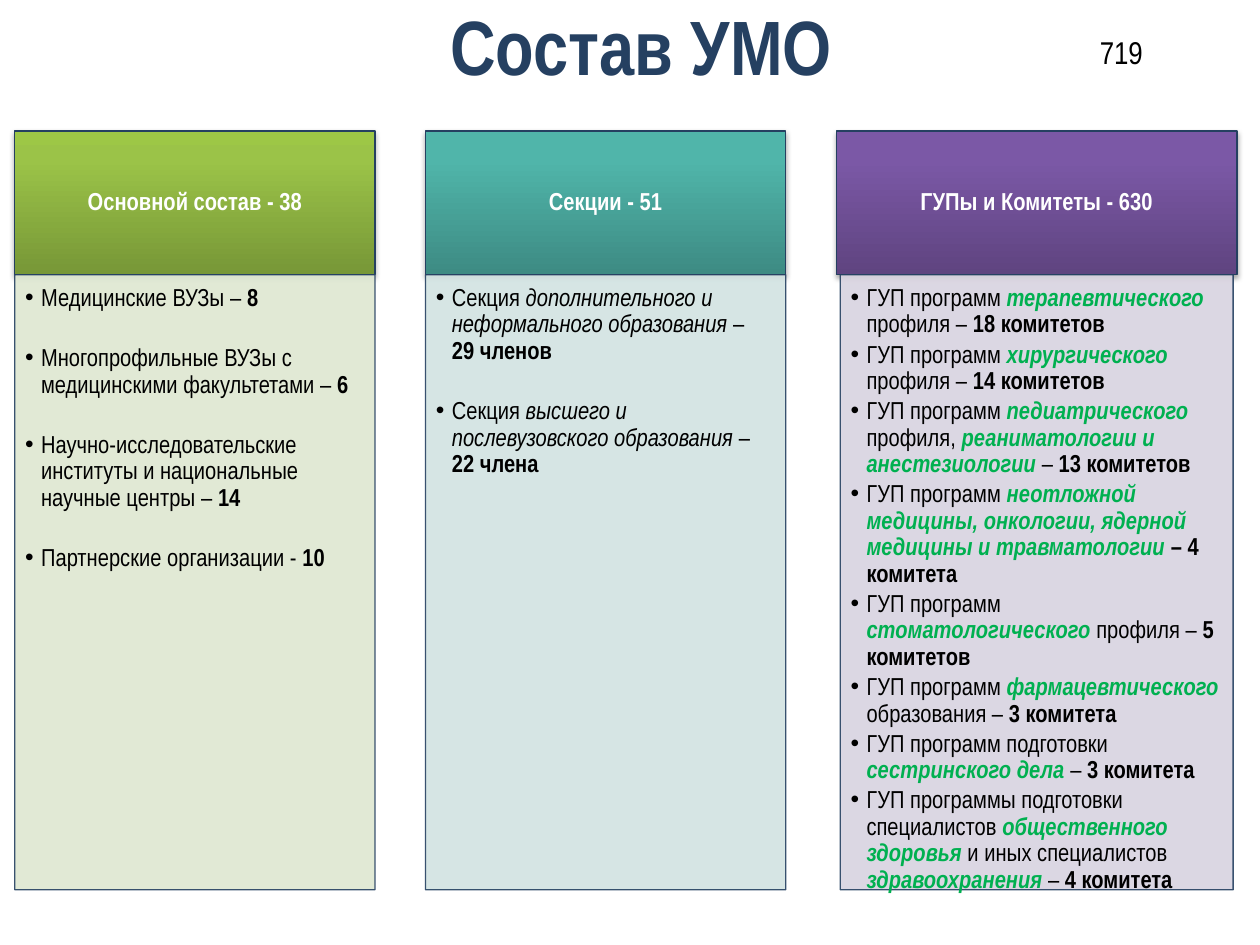
import copy
from dataclasses import dataclass

import lxml.etree
import pptx
import pptx.dml.color
import pptx.enum.shapes
import pptx.enum.text
import pptx.oxml
import pptx.oxml.ns
import pptx.util

Cm = pptx.util.Cm
Pt = pptx.util.Pt
qn = pptx.oxml.ns.qn
ANCHOR = pptx.enum.text.MSO_ANCHOR
CENTER = pptx.enum.text.PP_ALIGN.CENTER


@dataclass(frozen=True)
class Theme:
    font: str = "Arial Narrow"
    navy: str = "254061"
    black: str = "000000"
    white: str = "FFFFFF"
    green: str = "00B050"
    title: int = 44
    number: int = 18
    body: int = 14
    tight: float = 2.1
    loose: float = 19.3


THEME = Theme()
STYLES = {
    "plain": {},
    "bold": {"bold": True},
    "italic": {"italic": True},
    "green": {"bold": True, "italic": True, "color": THEME.green},
}
GUP = ("ГУП программ ", "plain")
DASH = ("– ", "plain")
PROFILE = ("профиля – ", "plain")

COLUMNS = [
    {
        "title": "Основной состав - 38", "width": 7.26, "inset": 0,
        "gradient": ("779737", "9BC348", "9DC746"), "tint": "DEE7D1", "gap": THEME.loose,
        "items": [
            [("Медицинские ВУЗы – ", "plain"), ("8", "bold")],
            [("Многопрофильные ВУЗы с медицинскими факультетами – ", "plain"), ("6", "bold")],
            [("Научно-исследовательские институты и национальные научные центры – ", "plain"),
             ("14", "bold")],
            [("Партнерские организации - ", "plain"), ("10", "bold")],
        ],
    },
    {
        "title": "Секции - 51", "width": 7.26, "inset": 0,
        "gradient": ("3D8B83", "50B5AA", "4EB8AC"), "tint": "D2E3E2", "gap": THEME.loose,
        "items": [
            [("Секция ", "plain"), ("дополнительного и неформального образования ", "italic"),
             DASH, ("29 членов", "bold")],
            [("Секция ", "plain"), ("высшего и послевузовского образования ", "italic"),
             DASH, ("22 члена", "bold")],
        ],
    },
    {
        "title": "ГУПы и Комитеты - 630", "width": 8.08, "inset": 0.08,
        "gradient": ("5F4480", "7B58A6", "7C57A8"), "tint": "D8D3E0", "gap": THEME.tight,
        "items": [
            [GUP, ("терапевтического ", "green"), PROFILE, ("18 комитетов", "bold")],
            [GUP, ("хирургического ", "green"), PROFILE, ("14 комитетов", "bold")],
            [GUP, ("педиатрического ", "green"), ("профиля, ", "plain"),
             ("реаниматологии и анестезиологии ", "green"), DASH, ("13 комитетов", "bold")],
            [GUP, ("неотложной медицины, онкологии, ядерной медицины и травматологии ", "green"),
             ("– 4 комитета", "bold")],
            [GUP, ("стоматологического ", "green"), PROFILE, ("5 комитетов", "bold")],
            [GUP, ("фармацевтического ", "green"), ("образования – ", "plain"),
             ("3 комитета", "bold")],
            [("ГУП программ подготовки ", "plain"), ("сестринского дела ", "green"),
             DASH, ("3 комитета", "bold")],
            [("ГУП программы подготовки специалистов ", "plain"),
             ("общественного здоровья ", "green"), ("и иных специалистов ", "plain"),
             ("здравоохранения ", "green"), DASH, ("4 комитета", "bold")],
        ],
    },
]


def rgb(value):
    return pptx.dml.color.RGBColor.from_string(value)


def add_text(p, text, size=THEME.body, color=THEME.black, bold=False, italic=False):
    r = p.add_run()
    r.text = text
    r.font.name = THEME.font
    r.font.size = Pt(size)
    r.font.color.rgb = rgb(color)
    r.font.bold = bold
    r.font.italic = italic


def set_frame(sp, anchor, margins):
    tf = sp.text_frame
    tf.word_wrap = True
    tf.vertical_anchor = anchor
    tf.margin_left, tf.margin_top, tf.margin_right, tf.margin_bottom = map(Cm, margins)
    return tf


def add_label(slide, box, text, **style):
    sp = slide.shapes.add_textbox(*map(Cm, box))
    tf = set_frame(sp, ANCHOR.MIDDLE, (0.25, 0.13, 0.25, 0.13))
    p = tf.paragraphs[0]
    p.alignment = CENTER
    add_text(p, text, **style)
    return tf


def add_panel(slide, box):
    sp = slide.shapes.add_shape(pptx.enum.shapes.MSO_SHAPE.RECTANGLE, *map(Cm, box))
    sp.shadow.inherit = False
    sp.line.color.rgb = rgb(THEME.navy)
    sp.line.width = Pt(0.75)
    return sp


def set_gradient(sp, colors):
    sp.fill.gradient()
    first = next(sp._element.spPr.iter(qn("a:gs")))
    first.addnext(copy.deepcopy(first))
    for stop, color, position in zip(sp.fill.gradient_stops, colors, (0, 0.8, 1)):
        stop.color.rgb = rgb(color)
        stop.position = position
    sp.fill.gradient_angle = 90


def set_shadow(sp):
    effects = sp._element.spPr.find(qn("a:effectLst"))
    shadow = lxml.etree.SubElement(
        effects, qn("a:outerShdw"), blurRad=str(Pt(3.1)), dist=str(Pt(1.8)),
        dir="5400000", rotWithShape="0")
    color = lxml.etree.SubElement(shadow, qn("a:srgbClr"), val=THEME.black)
    lxml.etree.SubElement(color, qn("a:alpha"), val="35000")


def set_bullet(p):
    pPr = p._p.get_or_add_pPr()
    pPr.set("marL", str(Cm(0.32)))
    pPr.set("indent", str(-Cm(0.32)))
    lxml.etree.SubElement(pPr, qn("a:buFont"), typeface="Arial")
    lxml.etree.SubElement(pPr, qn("a:buChar"), char="•")


def add_header(slide, box, title, colors):
    sp = add_panel(slide, box)
    set_gradient(sp, colors)
    set_shadow(sp)
    p = set_frame(sp, ANCHOR.MIDDLE, (0.28, 0.16, 0.28, 0.16)).paragraphs[0]
    p.alignment = CENTER
    p.line_spacing = 0.9
    add_text(p, title, color=THEME.white, bold=True)


def add_list(slide, box, items, tint, gap):
    sp = add_panel(slide, box)
    sp.fill.solid()
    sp.fill.fore_color.rgb = rgb(tint)
    for color in sp._element.spPr.iter(qn("a:srgbClr")):
        lxml.etree.SubElement(color, qn("a:alpha"), val="90000")
    tf = set_frame(sp, ANCHOR.TOP, (0.21, 0.21, 0.28, 0.3))
    for i, item in enumerate(items):
        p = tf.add_paragraph() if i else tf.paragraphs[0]
        p.alignment = pptx.enum.text.PP_ALIGN.LEFT
        p.level = 1
        p.line_spacing = 0.9
        p.space_after = Pt(gap)
        set_bullet(p)
        for text, style in item:
            add_text(p, text, **STYLES[style])


def add_column(slide, box, column):
    x, y, w, h = box
    head, inset = 2.9, column["inset"]
    add_header(slide, (x, y, w, head), column["title"], column["gradient"])
    add_list(slide, (x + inset, y + head, w - 2 * inset, h - head),
             column["items"], column["tint"], column["gap"])


def main():
    prs = pptx.Presentation()
    prs.slide_width, prs.slide_height = Cm(25.4), Cm(19.05)
    slide = prs.slides.add_slide(prs.slide_layouts[6])
    add_label(slide, (1.5, -0.69, 22.86, 3.18), "Состав УМО",
              size=THEME.title, color=THEME.navy, bold=True)
    for i, column in enumerate(COLUMNS):
        add_column(slide, (0.3 + i * 8.28, 2.64, column["width"], 15.3), column)
    tf = add_label(slide, (21.31, 0.53, 2.59, 1.02), "719", size=THEME.number)
    tf.auto_size = pptx.enum.text.MSO_AUTO_SIZE.SHAPE_TO_FIT_TEXT
    prs.save("out.pptx")


if __name__ == "__main__":
    main()
